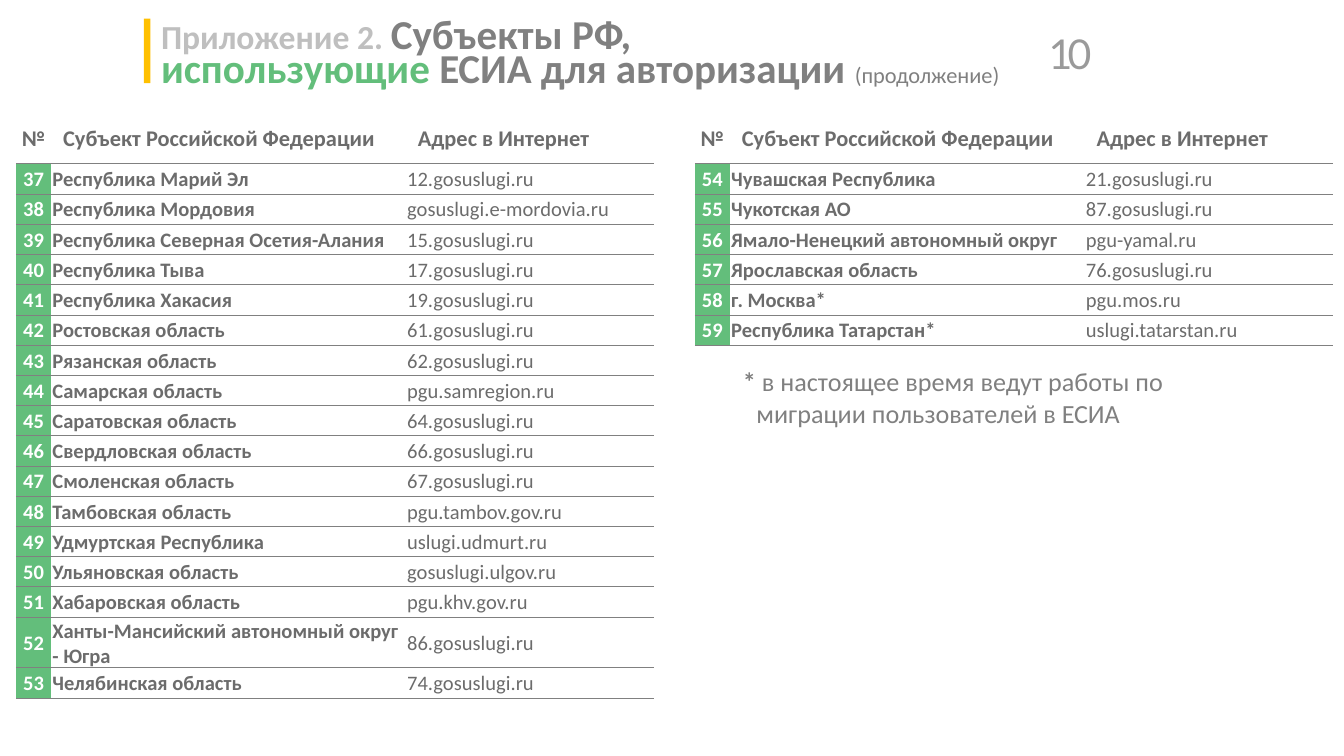
from dataclasses import dataclass

from lxml import etree
from pptx import Presentation
from pptx.dml.color import RGBColor
from pptx.enum.shapes import MSO_SHAPE
from pptx.enum.text import MSO_ANCHOR, PP_ALIGN
from pptx.oxml.ns import qn
from pptx.util import Inches, Pt

RECTANGLE = MSO_SHAPE.RECTANGLE
MIDDLE, TOP = MSO_ANCHOR.MIDDLE, MSO_ANCHOR.TOP
CENTER, LEFT, RIGHT = PP_ALIGN.CENTER, PP_ALIGN.LEFT, PP_ALIGN.RIGHT
PLAIN_TABLE_STYLE = "{2D5ABB26-0587-4C30-8999-92F81FD0307C}"


@dataclass(frozen=True)
class Theme:
    font: str = "Calibri"
    number_font: str = "Lato"
    green: str = "63BE7B"
    amber: str = "FFC000"
    gray: str = "808080"
    pale: str = "BFBFBF"
    page: str = "9A9A9A"
    text: str = "6C6C6C"
    white: str = "FFFFFF"
    title: int = 22
    prefix: int = 18
    note: int = 14
    header: int = 12
    body: int = 11
    rule: float = 0.5


theme = Theme()

HEADER = ("№", "Субъект Российской Федерации", "Адрес в Интернет")
REGIONS = [
    ("Республика Марий Эл", "12.gosuslugi.ru"),
    ("Республика Мордовия", "gosuslugi.e-mordovia.ru"),
    ("Республика Северная Осетия-Алания", "15.gosuslugi.ru"),
    ("Республика Тыва", "17.gosuslugi.ru"),
    ("Республика Хакасия", "19.gosuslugi.ru"),
    ("Ростовская область", "61.gosuslugi.ru"),
    ("Рязанская область", "62.gosuslugi.ru"),
    ("Самарская область", "pgu.samregion.ru"),
    ("Саратовская область", "64.gosuslugi.ru"),
    ("Свердловская область", "66.gosuslugi.ru"),
    ("Смоленская область", "67.gosuslugi.ru"),
    ("Тамбовская область", "pgu.tambov.gov.ru"),
    ("Удмуртская Республика", "uslugi.udmurt.ru"),
    ("Ульяновская область", "gosuslugi.ulgov.ru"),
    ("Хабаровская область", "pgu.khv.gov.ru"),
    ("Ханты-Мансийский автономный округ - Югра", "86.gosuslugi.ru"),
    ("Челябинская область", "74.gosuslugi.ru"),
    ("Чувашская Республика", "21.gosuslugi.ru"),
    ("Чукотская АО", "87.gosuslugi.ru"),
    ("Ямало-Ненецкий автономный округ", "pgu-yamal.ru"),
    ("Ярославская область", "76.gosuslugi.ru"),
    ("г. Москва*", "pgu.mos.ru"),
    ("Республика Татарстан*", "uslugi.tatarstan.ru"),
]
FIRST_NUMBER = 37
LEFT_COUNT = 17

presentation = Presentation()
presentation.slide_width, presentation.slide_height = Inches(10), Inches(5.625)
COLUMN = presentation.slide_width / 100
ROW = presentation.slide_height / 25
slide = presentation.slides.add_slide(presentation.slide_layouts[6])


def style_font(font, size, color, bold=False, name=theme.font):
    font.name, font.size, font.bold = name, Pt(size), bold
    font.color.rgb = RGBColor.from_string(color)


def add_text(left, top, width, height, anchor, insets):
    """Add a text box placed in grid units and return its first paragraph."""
    box = slide.shapes.add_textbox(
        int(left * COLUMN), int(top * ROW), int(width * COLUMN), int(height * ROW))
    frame = box.text_frame
    frame.word_wrap, frame.vertical_anchor = True, anchor
    (frame.margin_left, frame.margin_top,
     frame.margin_right, frame.margin_bottom) = map(Inches, insets)
    return frame.paragraphs[0]


# Heading
accent = slide.shapes.add_shape(
    RECTANGLE, int(10.7 * COLUMN), int(0.62 * ROW), int(0.5 * COLUMN), int(2.13 * ROW))
accent.shadow.inherit = False
accent.fill.solid()
accent.fill.fore_color.rgb = RGBColor.from_string(theme.amber)
accent.line.fill.background()

page_number = add_text(76, 0.76, 5.9, 1.96, TOP, (0.07, 0.04, 0.07, 0.04))
page_number.alignment = RIGHT
run = page_number.add_run()
run.text = "10"
style_font(run.font, theme.title, theme.page, name=theme.number_font)
run.font._element.set("spc", "-260")

title = add_text(11, 0.44, 71.3, 2.62, MIDDLE, (0.1, 0.1, 0.1, 0.05))
title.line_spacing = 0.7
for text, size, color, bold in (
    ("Приложение 2. ", theme.prefix, theme.pale, True),
    ("Субъекты РФ, ", theme.title, theme.gray, True),
    ("использующие", theme.title, theme.green, True),
    (" ЕСИА для авторизации ", theme.title, theme.gray, True),
    ("(продолжение)", theme.header, theme.gray, False),
):
    if color == theme.green:
        title.add_line_break()
    run = title.add_run()
    run.text = text
    style_font(run.font, size, color, bold)

# Region tables
numbered = [(str(number), *region) for number, region in enumerate(REGIONS, FIRST_NUMBER)]
column_widths = (2.6, 26.4, 18.5)
for left, regions in ((1.2, numbered[:LEFT_COUNT]), (51.7, numbered[LEFT_COUNT:])):
    rows = [HEADER, *regions]
    row_heights = [1.69] + [1] * len(regions)
    frame = slide.shapes.add_table(
        len(rows), len(HEADER), int(left * COLUMN), int(3.73 * ROW),
        int(sum(column_widths) * COLUMN), int(sum(row_heights) * ROW))
    table = frame.table
    table.horz_banding = False
    table._tbl.tblPr.find(qn("a:tableStyleId")).text = PLAIN_TABLE_STYLE
    for column, width in zip(table.columns, column_widths):
        column.width = int(width * COLUMN)
    for row, height in zip(table.rows, row_heights):
        row.height = int(height * ROW)

    for row_index, values in enumerate(rows):
        is_header = row_index == 0
        for column_index, value in enumerate(values):
            cell = table.cell(row_index, column_index)
            is_number = column_index == 0
            is_badge = is_number and not is_header
            cell.vertical_anchor = MIDDLE
            cell.margin_left = cell.margin_right = cell.margin_top = Inches(0.01)
            cell.margin_bottom = 0

            for side in ("a:lnB",) if is_header else ("a:lnT", "a:lnB"):
                border = etree.SubElement(
                    cell._tc.get_or_add_tcPr(), qn(side), w=str(Pt(theme.rule)))
                fill = etree.SubElement(border, qn("a:solidFill"))
                etree.SubElement(fill, qn("a:srgbClr"), val=theme.gray)
            if is_badge:
                cell.fill.solid()
                cell.fill.fore_color.rgb = RGBColor.from_string(theme.green)
            else:
                cell.fill.background()

            paragraph = cell.text_frame.paragraphs[0]
            paragraph.text = value
            paragraph.alignment = CENTER if is_number else LEFT
            if is_header and not is_number:
                paragraph._p.get_or_add_pPr().set("marL", str(Inches(0.08)))
            style_font(
                paragraph.font,
                theme.header if is_header else theme.body,
                theme.white if is_badge else theme.text,
                bold=is_header or column_index < 2)

# Footnote
footnote = add_text(54.3, 11.64, 41.7, 2.76, MIDDLE, (0.1, 0.1, 0.1, 0.05))
footnote_properties = footnote._p.get_or_add_pPr()
footnote_properties.set("marL", str(Inches(0.1)))
footnote_properties.set("indent", str(-Inches(0.1)))
for text, bold in (
    ("*", True),
    (" в настоящее время ведут работы по миграции пользователей в ЕСИА", False),
):
    run = footnote.add_run()
    run.text = text
    style_font(run.font, theme.note, theme.gray, bold)

presentation.save("out.pptx")
